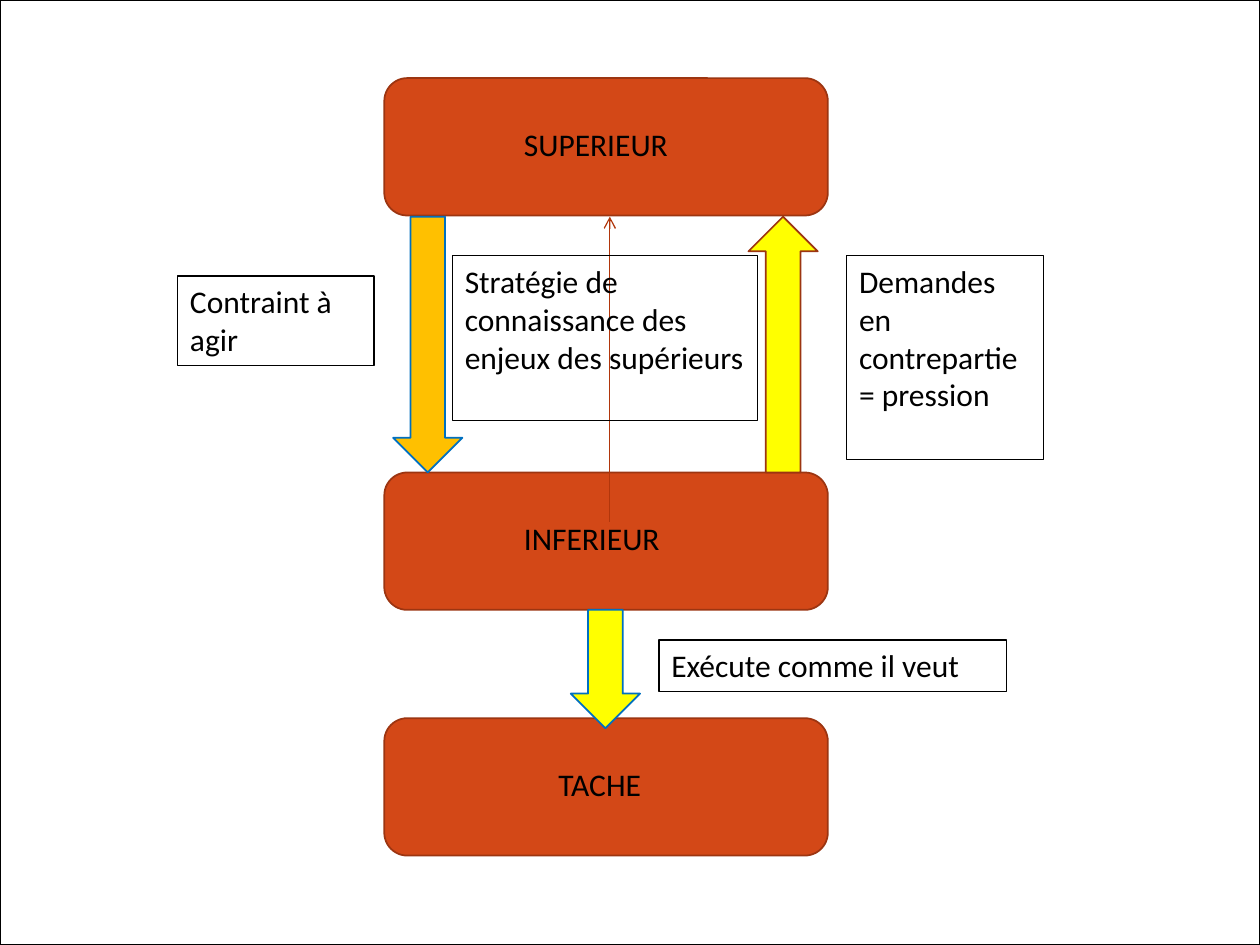
from collections import namedtuple

from lxml import etree
from pptx import Presentation, util as u
from pptx.dml.color import RGBColor
from pptx.enum import shapes, text
from pptx.oxml.ns import qn

SLIDE_WIDTH, SLIDE_HEIGHT = u.Inches(10), u.Inches(7.5)
COLUMNS, ROWS = 100, 75
FONT, FONT_SIZE = "Calibri", 18
BLACK, WHITE = "000000", "FFFFFF"
LEVEL_FILL, LEVEL_LINE = "D34817", "9C3511"
ORANGE, YELLOW, BLUE, THIN_RED = "FFC000", "FFFF00", "0070C0", "B1360B"
ARROW_WIDTH = 5.5

Box = namedtuple("Box", "left top width height")


def color(value):
    return RGBColor.from_string(value)


def across(columns):
    return round(SLIDE_WIDTH * columns / COLUMNS)


def down(rows):
    return round(SLIDE_HEIGHT * rows / ROWS)


def inside(box, left, top, width, height):
    return Box(box.left + left, box.top + top, width, height)


def lengths(box):
    return across(box.left), down(box.top), across(box.width), down(box.height)


def add_figure(slide, kind, box, fill, line, weight=1):
    shape = slide.shapes.add_shape(kind, *lengths(box))
    shape.shadow.inherit = False
    if fill:
        shape.fill.solid()
        shape.fill.fore_color.rgb = color(fill)
    else:
        shape.fill.background()
    shape.line.color.rgb = color(line)
    shape.line.width = u.Pt(weight)
    return shape


def write(shape, lines, alignment=text.PP_ALIGN.LEFT):
    frame = shape.text_frame
    frame.word_wrap = True
    frame.vertical_anchor = text.MSO_ANCHOR.TOP
    for index, line in enumerate(lines):
        paragraph = frame.add_paragraph() if index else frame.paragraphs[0]
        paragraph.alignment = alignment
        run = paragraph.add_run()
        run.text = line
        run.font.name = FONT
        run.font.size = u.Pt(FONT_SIZE)
        run.font.color.rgb = color(BLACK)


def add_note(slide, box, *lines):
    note = add_figure(slide, shapes.MSO_SHAPE.RECTANGLE, box, None, BLACK, 0.75)
    write(note, lines)


def add_thin_arrow(slide, column, start_row, end_row):
    connector = slide.shapes.add_connector(
        shapes.MSO_CONNECTOR.STRAIGHT,
        across(column), down(start_row), across(column), down(end_row))
    connector.line.color.rgb = color(THIN_RED)
    connector.line.width = u.Pt(0.75)
    line = connector.line._get_or_add_ln()
    etree.SubElement(line, qn("a:tailEnd"), type="arrow")
    etree.SubElement(connector._element.spPr, qn("a:effectLst"))


def add_level(slide, box, label, label_left, label_width, alignment):
    add_figure(slide, shapes.MSO_SHAPE.ROUNDED_RECTANGLE, box, LEVEL_FILL, LEVEL_LINE)
    label_box = inside(box, label_left, 3.2, label_width, 4)
    write(slide.shapes.add_textbox(*lengths(label_box)), [label], alignment)


def add_exchange(slide, box):
    add_thin_arrow(slide, box.left + 34.3, box.top + 24.2, box.top)
    add_note(slide, inside(box, 0, 4.7, 15.6, 7.1), "Contraint à agir")
    add_note(slide, inside(box, box.width - 15.6, 3.1, 15.6, 16.2),
             "Demandes en contrepartie", "= pression")
    add_figure(slide, shapes.MSO_SHAPE.DOWN_ARROW,
               inside(box, 17.1, 0, ARROW_WIDTH, box.height), ORANGE, BLUE)
    add_figure(slide, shapes.MSO_SHAPE.UP_ARROW,
               inside(box, 45.3, 0, ARROW_WIDTH, box.height), YELLOW, LEVEL_LINE)
    add_note(slide, inside(box, 21.8, 3.1, 24.2, 13.1),
             "Stratégie de connaissance des enjeux des supérieurs")


def add_execution(slide, box):
    add_figure(slide, shapes.MSO_SHAPE.DOWN_ARROW,
               inside(box, 0, 0, ARROW_WIDTH, box.height), YELLOW, BLUE)
    add_note(slide, inside(box, 7, 2.4, box.width - 7, 4.1), "Exécute comme il veut")


def main():
    presentation = Presentation()
    presentation.slide_width, presentation.slide_height = SLIDE_WIDTH, SLIDE_HEIGHT
    slide = presentation.slides.add_slide(presentation.slide_layouts[6])
    add_figure(slide, shapes.MSO_SHAPE.RECTANGLE, Box(0, 0, COLUMNS, ROWS),
               WHITE, BLACK, 0.75)

    levels = [
        (6.2, "SUPERIEUR", 10.1, 18, text.PP_ALIGN.LEFT),
        (37.5, "INFERIEUR", 10.1, 15.6, text.PP_ALIGN.LEFT),
        (57, "TACHE", 9.3, 15.6, text.PP_ALIGN.CENTER),
    ]
    for top, *label in levels:
        add_level(slide, Box(30.5, top, 35.2, 10.9), *label)
    add_exchange(slide, Box(14.1, 17.2, 68.7, 20.3))
    add_execution(slide, Box(45.3, 48.4, 34.6, 9.4))
    presentation.save("out.pptx")


if __name__ == "__main__":
    main()
